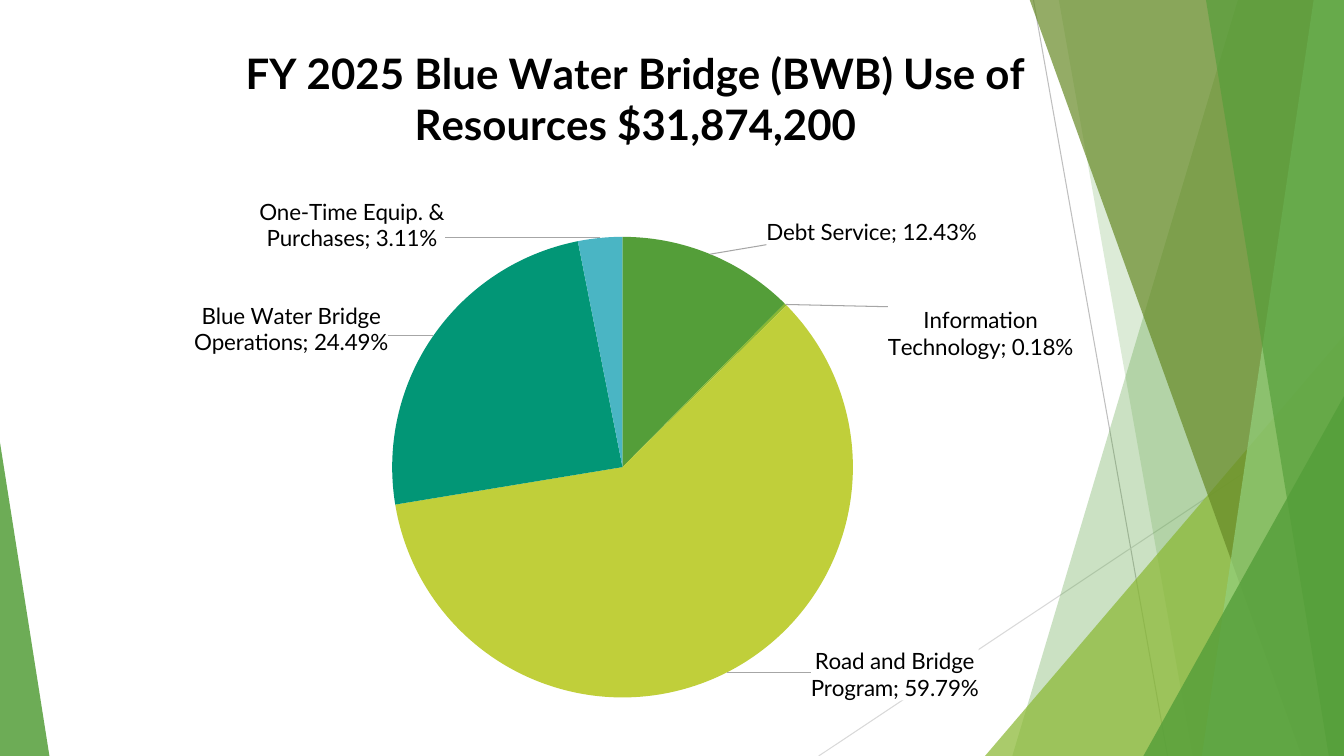
from copy import deepcopy
from pptx import Presentation
from pptx.chart.data import CategoryChartData
from pptx.dml.color import RGBColor
from pptx.enum.chart import XL_CHART_TYPE, XL_LABEL_POSITION
from pptx.enum.shapes import MSO_CONNECTOR, MSO_SHAPE
from pptx.oxml import parse_xml
from pptx.oxml.ns import nsdecls, qn
from pptx.util import Inches, Pt

WIDE, HIGH = 13.33, 7.5
FONT = "Lato"
TITLE = "FY 2025 Blue Water Bridge (BWB) Use of Resources $31,874,200"
SLICES = [
    ("Debt Service", 0.1243, "549E39", (54, -4)),
    ("Information Technology", 0.0018, "8AB833", (98, 59)),
    ("Road and Bridge Program", 0.5979, "C0CF3A", (81, -30)),
    ("Blue Water Bridge Operations", 0.2449, "029676", (-40, 22)),
    ("One-Time Equip. & Purchases", 0.0311, "4AB5C4", (-155, 19)),
]
LINES = [
    ((10.25, 0), (11.58, HIGH), "BFBFBF"),
    ((WIDE, 4.03), (8.12, HIGH), "D9D9D9"),
]
BANDS = [
    ("band", 12.28, 10.04, "549E39", 30),
    ("band", 10.5, 11.83, "549E39", 20),
    ("peak", (9.77, 3.33, 3.56, 4.17), 1, "8AB833", 72),
    ("band", 10.21, 12.91, "678A26", 70),
    ("band", 13.03, 11.92, "93D07D", 70),
    ("band", 11.96, 13.18, "549E39", 65),
    ("peak", (11.34, 3.93, 1.99, 3.57), 1, "549E39", 80),
    ("peak", (0, 4.39, 0.49, 3.11), 0, "549E39", 85),
]
FRAME = (0.53, 0.19, 11.06, 7.31)
DPI = 100.8
PIE = (3.89, 2.35, 4.57, 4.57)
HEAD = (2.36, 0.36)


def color(code):
    return RGBColor.from_string(code)


def paint(shape, code, alpha):
    shape.shadow.inherit = False
    shape.line.fill.background()
    shape.fill.solid()
    shape.fill.fore_color.rgb = color(code)
    tint = shape.fill._xPr.find(".//" + qn("a:srgbClr"))
    tint.append(parse_xml(f'<a:alpha {nsdecls("a")} val="{alpha * 1000}"/>'))


def layout(x, y, w=None, h=None, edge=True, inner=False):
    tags = '<c:layoutTarget val="inner"/>' if inner else ""
    if edge:
        tags += '<c:xMode val="edge"/><c:yMode val="edge"/>'
    for key, val in zip("xywh", (x, y, w, h)):
        if val is not None:
            tags += f'<c:{key} val="{val:.4f}"/>'
    return parse_xml(f'<c:layout {nsdecls("c")}><c:manualLayout>{tags}'
                     '</c:manualLayout></c:layout>')


def place(node, new, after=None):
    for old in node.findall(qn("c:layout")):
        node.remove(old)
    if after is None:
        node.insert(0, new)
    else:
        node.find(qn(after)).addnext(new)


def look(fill, line="<a:ln><a:noFill/></a:ln>"):
    return parse_xml(f'<c:spPr {nsdecls("c", "a")}>{fill}{line}</c:spPr>')


def style(font, size, bold=False):
    font.name, font.size, font.bold = FONT, Pt(size), bold
    font.color.rgb = color("000000")


def share(x, y):
    return (x - FRAME[0]) / FRAME[2], (y - FRAME[1]) / FRAME[3]


def backdrop(slide):
    for start, end, code in LINES:
        line = slide.shapes.add_connector(
            MSO_CONNECTOR.STRAIGHT, *[Inches(v) for v in start + end])
        line.line.color.rgb = color(code)
        line.line.width = Pt(0.75)
        line._element.spPr.append(parse_xml(f'<a:effectLst {nsdecls("a")}/>'))
    for kind, place_at, foot, code, alpha in BANDS:
        if kind == "band":
            pen = slide.shapes.build_freeform(
                Inches(place_at), Inches(-0.01), scale=1.0)
            rest = [(WIDE, -0.01), (WIDE, HIGH), (foot, HIGH)]
            pen.add_line_segments(
                [(Inches(x), Inches(y)) for x, y in rest], close=True)
            shape = pen.convert_to_shape()
        else:
            shape = slide.shapes.add_shape(
                MSO_SHAPE.ISOSCELES_TRIANGLE, *[Inches(v) for v in place_at])
            shape.adjustments[0] = foot
        paint(shape, code, alpha)


def label(series):
    tags = series.data_labels
    tags.show_value = tags.show_category_name = True
    tags.number_format = "0.00%"
    tags.number_format_is_linked = False
    tags.position = XL_LABEL_POSITION.OUTSIDE_END
    style(tags.font, 16)
    root = tags._element
    white = '<a:solidFill><a:srgbClr val="FFFFFF"/></a:solidFill>'
    root.find(qn("c:numFmt")).addnext(look(white))
    root.find(qn("c:showBubbleSize")).addnext(
        parse_xml(f'<c:separator {nsdecls("c")}>; </c:separator>'))
    lead = root.find(qn("c:showLeaderLines"))
    if lead is not None:
        root.remove(lead)
    parts = list(root)
    for idx, (_, _, _, (dx, dy)) in enumerate(SLICES):
        tag = parse_xml(f'<c:dLbl {nsdecls("c")}><c:idx val="{idx}"/></c:dLbl>')
        tag.append(layout(dx / DPI / FRAME[2], dy / DPI / FRAME[3], edge=False))
        for part in parts:
            tag.append(deepcopy(part))
        root.insert(idx, tag)
    root.append(parse_xml(f'<c:showLeaderLines {nsdecls("c")} val="1"/>'))
    lead = parse_xml(f'<c:leaderLines {nsdecls("c")}/>')
    gray = '<a:solidFill><a:srgbClr val="A6A6A6"/></a:solidFill>'
    lead.append(look("", f'<a:ln w="9525">{gray}</a:ln>'))
    root.append(lead)


def draw(slide):
    data = CategoryChartData(number_format="0.00%")
    data.categories = [row[0] for row in SLICES]
    data.add_series("Series 1", [row[1] for row in SLICES])
    chart = slide.shapes.add_chart(
        XL_CHART_TYPE.PIE, *[Inches(v) for v in FRAME], data).chart
    style(chart.font, 10)
    chart.has_legend = False
    chart.has_title = True
    run = chart.chart_title.text_frame.paragraphs[0].add_run()
    run.text = TITLE
    style(run.font, 30, True)
    place(chart.chart_title._element, layout(*share(*HEAD)), "c:tx")
    chart.chart_title.include_in_layout = False
    plot = chart.plots[0]
    plot.vary_by_categories = True
    series = plot.series[0]
    for idx, row in enumerate(SLICES):
        form = series.points[idx].format
        form.fill.solid()
        form.fill.fore_color.rgb = color(row[2])
        form.line.fill.background()
    label(series)
    root = chart._chartSpace
    area = root.chart.plotArea
    place(area, layout(*share(*PIE[:2]), PIE[2] / FRAME[2],
                       PIE[3] / FRAME[3], inner=True))
    root.chart.addnext(look("<a:noFill/>"))


def main():
    deck = Presentation()
    deck.slide_width, deck.slide_height = Inches(WIDE), Inches(HIGH)
    slide = deck.slides.add_slide(deck.slide_layouts[6])
    backdrop(slide)
    draw(slide)
    deck.save("out.pptx")


if __name__ == "__main__":
    main()
